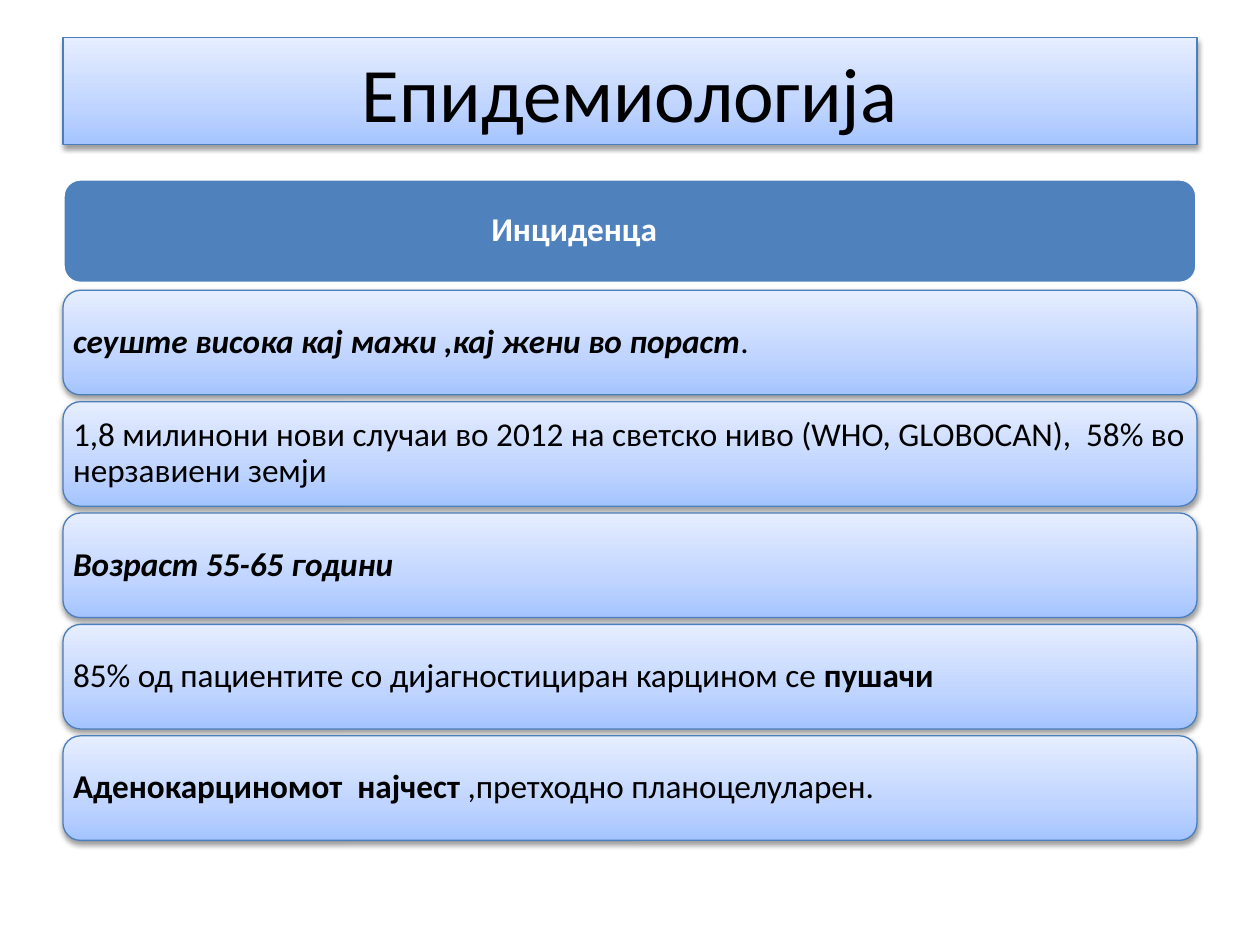
from dataclasses import dataclass

import pptx
import pptx.dml.color
import pptx.enum.shapes
import pptx.enum.text
import pptx.oxml
import pptx.oxml.ns
import pptx.util
from pptx.util import Inches

COLORS = {
    "black": "000000",
    "white": "FFFFFF",
    "header": "4F81BD",
    "outline": "4B7EBC",
}
GRADIENT = [(0, "A4C4FF"), (35, "BFD4FF"), (100, "E6EEFF")]
FONT = "Calibri"
LEFT, WIDTH = 0.5, 9
FIRST_TOP, ROW_HEIGHT, ROW_STEP = 1.42, 0.83, 0.884
INSET = 0.04


@dataclass
class Span:
    text: str
    bold: bool = False
    italic: bool = False


@dataclass
class Row:
    spans: list[Span]
    header: bool = False


ROWS = [
    Row([Span("Инциденца", bold=True)], header=True),
    Row([Span("сеуште висока кај мажи ,кај жени во пораст", bold=True, italic=True), Span(".")]),
    Row([Span("1,8 милинони нови случаи во 2012 на светско ниво (WHO, GLOBOCAN),  58% во нерзавиени земји")]),
    Row([Span("Возраст 55-65 години", bold=True, italic=True)]),
    Row([Span("85% од пациентите со дијагностициран карцином се "), Span("пушачи", bold=True)]),
    Row([Span("Аденокарциномот  најчест ", bold=True), Span(",претходно планоцелуларен.")]),
]


def rgb(name: str) -> pptx.dml.color.RGBColor:
    return pptx.dml.color.RGBColor.from_string(COLORS[name])


def set_line(box, color: str, width: float) -> None:
    box.line.color.rgb = rgb(color)
    box.line.width = pptx.util.Pt(width)


def style_glossy(box) -> None:
    """Vertical gradient, thin outline and a soft shadow below."""
    box.fill.gradient()
    box.fill.gradient_angle = 90
    properties = box._element.spPr
    stops = properties.find(".//" + pptx.oxml.ns.qn("a:gsLst"))
    for stop in list(stops):
        stops.remove(stop)
    namespace = pptx.oxml.ns.nsdecls("a")
    for position, color in GRADIENT:
        stops.append(pptx.oxml.parse_xml(
            f'<a:gs {namespace} pos="{position * 1000}"><a:srgbClr val="{color}"/></a:gs>'))
    set_line(box, "outline", 0.75)
    box.shadow.inherit = False
    properties.find(pptx.oxml.ns.qn("a:effectLst")).append(pptx.oxml.parse_xml(
        f'<a:outerShdw {namespace} blurRad="40000" dist="20000" dir="5400000" rotWithShape="0">'
        f'<a:srgbClr val="{COLORS["black"]}"><a:alpha val="38000"/></a:srgbClr></a:outerShdw>'))


def add_span(para, span: Span, size: float, color: str) -> None:
    run = para.add_run()
    run.text = span.text
    run.font.name = FONT
    run.font.size = pptx.util.Pt(size)
    run.font.bold = span.bold
    run.font.italic = span.italic
    run.font.color.rgb = rgb(color)


def add_title(page, text: str) -> None:
    title = page.shapes.title
    title.left, title.top = Inches(LEFT), Inches(0.3)
    title.width, title.height = Inches(WIDTH), Inches(0.85)
    style_glossy(title)
    title.text_frame.vertical_anchor = pptx.enum.text.MSO_ANCHOR.MIDDLE
    para = title.text_frame.paragraphs[0]
    para.alignment = pptx.enum.text.PP_ALIGN.CENTER
    add_span(para, Span(text), 44, "black")


def add_row(page, row: Row, top: float) -> None:
    box = page.shapes.add_shape(
        pptx.enum.shapes.MSO_SHAPE.ROUNDED_RECTANGLE,
        Inches(LEFT), Inches(top), Inches(WIDTH), Inches(ROW_HEIGHT))
    if row.header:
        box.fill.solid()
        box.fill.fore_color.rgb = rgb("header")
        set_line(box, "white", 2)
        box.shadow.inherit = False
    else:
        style_glossy(box)

    frame = box.text_frame
    frame.word_wrap = True
    frame.vertical_anchor = pptx.enum.text.MSO_ANCHOR.MIDDLE
    frame.margin_left = Inches(3.36 if row.header else INSET)
    frame.margin_right = frame.margin_top = frame.margin_bottom = Inches(INSET)
    para = frame.paragraphs[0]
    para.alignment = pptx.enum.text.PP_ALIGN.LEFT
    para.line_spacing = 0.9
    for span in row.spans:
        add_span(para, span, 19, "white" if row.header else "black")


def main() -> None:
    deck = pptx.Presentation()
    deck.slide_width, deck.slide_height = Inches(10), Inches(7.5)
    page = deck.slides.add_slide(deck.slide_layouts[5])

    # Title bar
    add_title(page, "Епидемиологија")

    # Stacked rows
    for index, row in enumerate(ROWS):
        add_row(page, row, FIRST_TOP + index * ROW_STEP)

    deck.save("out.pptx")


if __name__ == "__main__":
    main()
